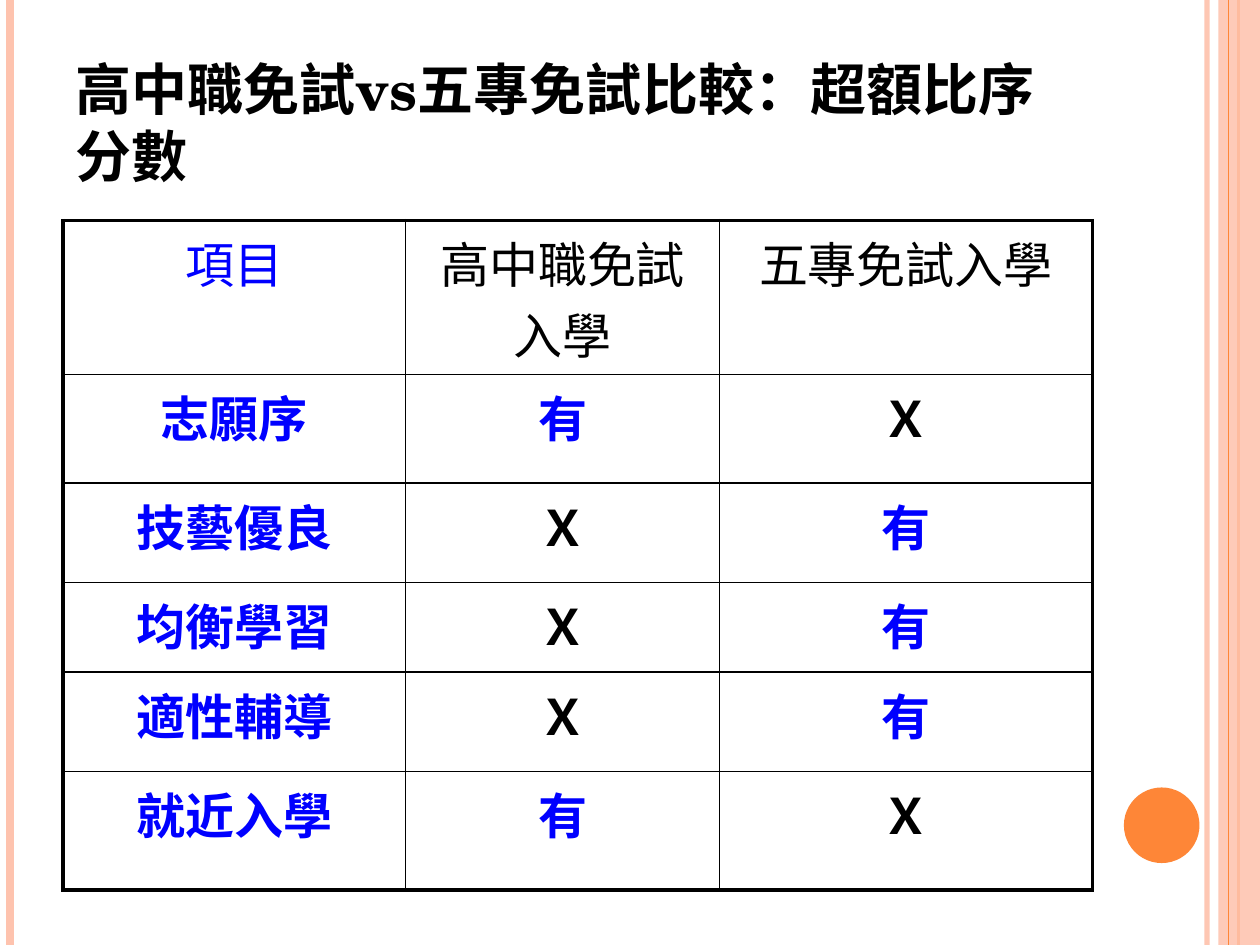
import pptx
import pptx.util
import pptx.dml.color
import pptx.enum.shapes
import pptx.enum.text
import pptx.oxml
import pptx.oxml.ns
from lxml import etree

Inches, Pt = pptx.util.Inches, pptx.util.Pt
RGBColor = pptx.dml.color.RGBColor
Shape = pptx.enum.shapes.MSO_SHAPE
Align = pptx.enum.text.PP_ALIGN
qn = pptx.oxml.ns.qn

BLACK = RGBColor(0x00, 0x00, 0x00)
BLUE = RGBColor(0x00, 0x00, 0xFF)
PEACH = RGBColor(0xFE, 0xC3, 0xAE)
ORANGE = RGBColor(0xFE, 0x86, 0x37)
FONT = "TeX Gyre Schola"
THIN, THICK = 1, 2.25

TITLE = "高中職免試vs五專免試比較：超額比序分數"
ROWS = [
    ("項目", "高中職免試入學", "五專免試入學"),
    ("志願序", "有", "Ｘ"),
    ("技藝優良", "Ｘ", "有"),
    ("均衡學習", "Ｘ", "有"),
    ("適性輔導", "Ｘ", "有"),
    ("就近入學", "有", "Ｘ"),
]
WIDTHS = [2.72, 2.49, 2.96]
HEIGHTS = [1.07, 0.86, 0.79, 0.71, 0.79, 0.94]


def fade(item, alpha):
    """Set the opacity, in percent, of the first colour in a shape."""
    color = next(item._element.spPr.iter(qn("a:srgbClr")))
    etree.SubElement(color, qn("a:alpha"), val=str(alpha * 1000))


def edge(cell, side, width):
    """Return nothing; add one black border line to a cell."""
    line = pptx.oxml.parse_xml(
        f'<a:{side} xmlns:a="http://schemas.openxmlformats.org/drawingml/2006/main"'
        f' w="{Pt(width)}"><a:solidFill><a:srgbClr val="{BLACK}"/></a:solidFill>'
        f'<a:prstDash val="solid"/></a:{side}>')
    cell._tc.get_or_add_tcPr().append(line)


class Deck:
    def __init__(self):
        self.show = pptx.Presentation()
        self.show.slide_width, self.show.slide_height = Inches(10), Inches(7.5)
        self.slide = self.show.slides.add_slide(self.show.slide_layouts[5])
        self.shapes = self.slide.shapes

    def style(self, para, size, color, bold):
        para.font.name, para.font.size = FONT, Pt(size)
        para.font.color.rgb, para.font.bold = color, bold

    def rule(self, x, color, width, alpha=100):
        """Draw a line down the full height of the slide."""
        line = self.shapes.add_connector(
            pptx.enum.shapes.MSO_CONNECTOR.STRAIGHT,
            Inches(x), 0, Inches(x), self.show.slide_height)
        line.line.color.rgb, line.line.width = color, Pt(width)
        etree.SubElement(line._element.spPr, qn("a:effectLst"))
        if alpha < 100:
            fade(line, alpha)

    def block(self, kind, box, color, alpha=100):
        shape = self.shapes.add_shape(kind, *map(Inches, box))
        shape.shadow.inherit = False
        shape.fill.solid()
        shape.fill.fore_color.rgb = color
        shape.line.fill.background()
        if alpha < 100:
            fade(shape, alpha)

    def title(self, text, box):
        head = self.shapes.title
        head.left, head.top, head.width, head.height = map(Inches, box)
        frame = head.text_frame
        frame.text = text
        frame.word_wrap = True
        frame.auto_size = pptx.enum.text.MSO_AUTO_SIZE.NONE
        frame.vertical_anchor = pptx.enum.text.MSO_ANCHOR.BOTTOM
        para = frame.paragraphs[0]
        para.alignment = Align.LEFT
        self.style(para, 32, BLACK, True)

    def table(self, rows, left, top, widths, heights):
        grid = self.shapes.add_table(
            len(rows), len(widths), Inches(left), Inches(top),
            Inches(sum(widths)), Inches(sum(heights))).table
        grid.first_row = grid.horz_banding = False
        for col, width in zip(grid.columns, widths):
            col.width = Inches(width)
        for row, height in zip(grid.rows, heights):
            row.height = Inches(height)
        for r, row in enumerate(rows):
            for c, text in enumerate(row):
                cell = grid.cell(r, c)
                ends = {"lnL": c == 0, "lnR": c == len(row) - 1,
                        "lnT": r == 0, "lnB": r == len(rows) - 1}
                for side, outer in ends.items():
                    edge(cell, side, THICK if outer else THIN)
                cell.fill.background()
                cell.text = text
                para = cell.text_frame.paragraphs[0]
                para.alignment, para.space_before = Align.CENTER, Pt(6)
                blue = c == 0 or text == "有"
                self.style(para, 28, BLUE if blue else BLACK, r > 0)


def main():
    deck = Deck()
    deck.rule(9.58, PEACH, 3, 93)
    deck.rule(0.08, PEACH, 4.5)
    deck.rule(9.83, ORANGE, 1.5)
    deck.block(Shape.RECTANGLE, (9.67, 0, 0.33, 7.5), PEACH, 87)
    deck.rule(9.75, ORANGE, 0.75)
    deck.block(Shape.OVAL, (8.92, 6.25, 0.6, 0.6), ORANGE)
    deck.title(TITLE, (0.5, 0.3, 8.17, 1.25))
    deck.table(ROWS, 0.5, 1.75, WIDTHS, HEIGHTS)
    deck.show.save("out.pptx")


if __name__ == "__main__":
    main()
